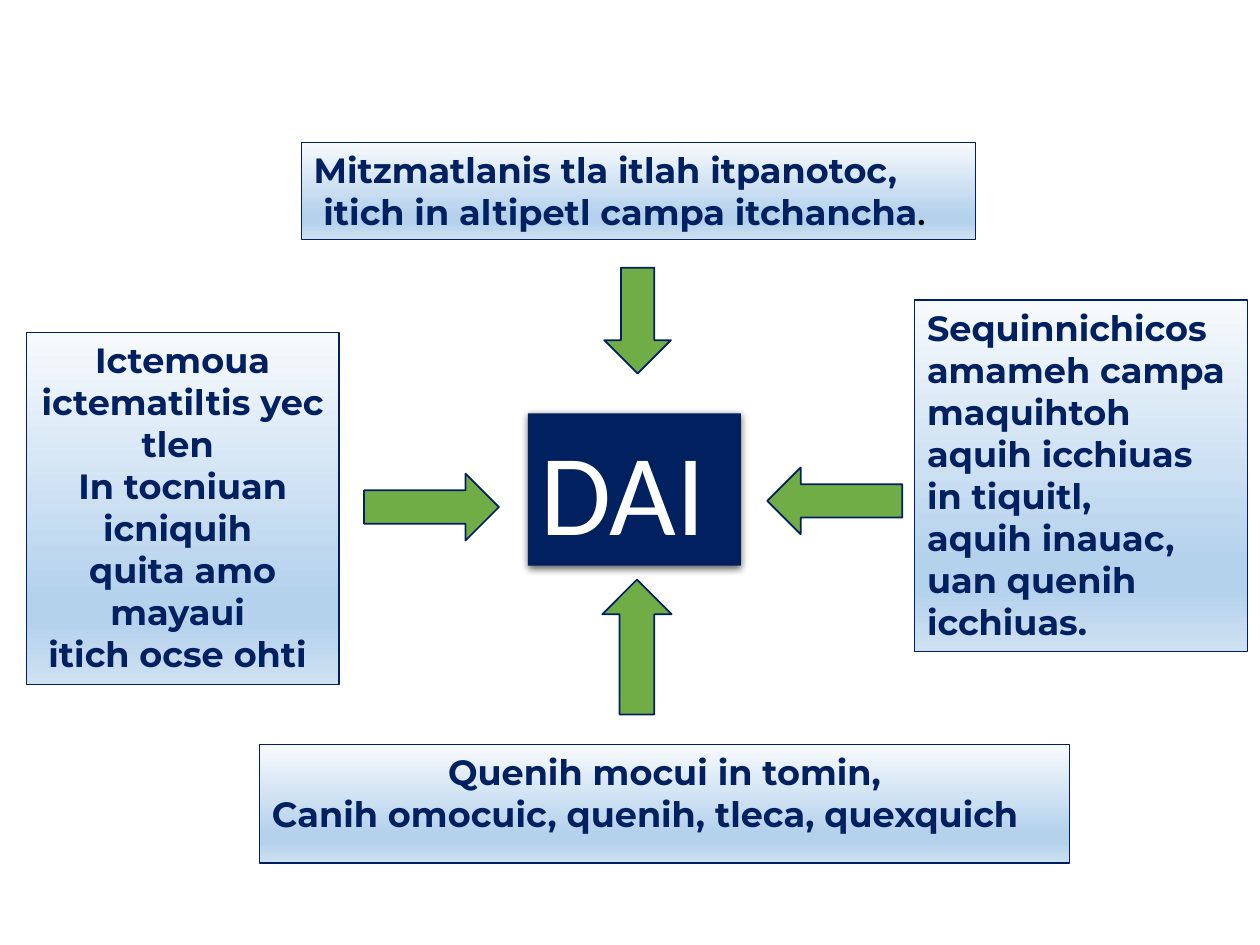
from lxml import etree
from pptx import Presentation
from pptx.dml.color import RGBColor
from pptx.enum.shapes import MSO_SHAPE
from pptx.enum.text import PP_ALIGN
from pptx.oxml import parse_xml
from pptx.util import Inches, Pt

LEFT, CENTER = PP_ALIGN.LEFT, PP_ALIGN.CENTER
RECT, ARROW = MSO_SHAPE.RECTANGLE, MSO_SHAPE.RIGHT_ARROW
NS = "http://schemas.openxmlformats.org/drawingml/2006/main"
NAVY, GREEN, WHITE, BLACK = "002060", "70AD47", "FFFFFF", "000000"
STOPS = [(0, "F7FAFD"), (74, "B5D2EC"), (83, "B5D2EC"), (100, "CEE1F2")]

HUB = ("DAI", (4.19, 3.28, 1.69, 1.21))
NOTES = [
    ((7.26, 2.38, 2.64, 2.79), [
        ("Sequinnichicos amameh campa maquihtoh aquih icchiuas in tiquitl,", LEFT),
        ("aquih inauac, uan quenih icchiuas.", LEFT)]),
    ((2.39, 1.13, 5.35, 0.77), [
        ("Mitzmatlanis tla itlah itpanotoc,", LEFT),
        (" itich in altipetl campa itchancha", LEFT)]),
    ((2.06, 5.91, 6.43, 0.94), [
        ("Quenih mocui in tomin,", CENTER),
        ("Canih omocuic, quenih, tleca, quexquich", LEFT)]),
    ((0.21, 2.64, 2.48, 2.79), [
        ("Ictemoua ictematiltis yec tlen ", CENTER),
        ("In tocniuan icniquih ", CENTER),
        ("quita amo mayaui ", CENTER),
        ("itich ocse ohti ", CENTER)]),
]
ARROWS = [
    ((4.52, 4.86, 1.07, 0.55), 270),
    ((6.09, 3.71, 1.07, 0.53), 180),
    ((4.64, 2.28, 0.84, 0.53), 90),
    ((2.89, 3.76, 1.07, 0.53), 0),
]


def rgb(value):
    """Return the colour for a hex string."""
    return RGBColor.from_string(value)


def style_run(r, font, size, color, bold=False):
    """Set the font of one run."""
    r.font.name, r.font.size, r.font.bold = font, Pt(size), bold
    r.font.color.rgb = rgb(color)


def set_line(sp, width):
    """Give a shape a navy outline."""
    sp.line.color.rgb = rgb(NAVY)
    sp.line.width = Pt(width)


def set_gradient(sp):
    """Fill a shape from top to bottom with the pale blue stops."""
    sp.fill.gradient()
    grad = sp.element.spPr.find(f"{{{NS}}}gradFill")
    stops = "".join(f'<a:gs pos="{pos * 1000}"><a:srgbClr val="{color}"/></a:gs>'
                    for pos, color in STOPS)
    grad.getparent().replace(grad, parse_xml(
        f'<a:gradFill xmlns:a="{NS}" rotWithShape="1"><a:gsLst>{stops}</a:gsLst>'
        '<a:lin ang="5400000" scaled="0"/></a:gradFill>'))


def set_shadow(sp):
    """Add a soft shadow just below a shape."""
    sp.shadow.inherit = False
    effects = sp.element.spPr.find(f"{{{NS}}}effectLst")
    shadow = etree.SubElement(effects, f"{{{NS}}}outerShdw", blurRad=str(Pt(4.5)),
                              dist=str(Pt(1.5)), dir="5400000", rotWithShape="0")
    color = etree.SubElement(shadow, f"{{{NS}}}srgbClr", val=BLACK)
    etree.SubElement(color, f"{{{NS}}}alpha", val="63000")


def add_hub(s, text, box):
    """Add the central block."""
    sp = s.shapes.add_shape(RECT, *map(Inches, box))
    sp.fill.solid()
    sp.fill.fore_color.rgb = rgb(NAVY)
    sp.line.fill.background()
    set_shadow(sp)
    tf = sp.text_frame
    tf.text = text
    p = tf.paragraphs[0]
    p.alignment = LEFT
    style_run(p.runs[0], "Calibri", 66, WHITE)


def add_arrow(s, box, rotation):
    """Add an arrow that points at the hub."""
    sp = s.shapes.add_shape(ARROW, *map(Inches, box))
    sp.rotation = rotation
    sp.shadow.inherit = False
    sp.fill.solid()
    sp.fill.fore_color.rgb = rgb(GREEN)
    set_line(sp, 1)


def add_note(s, box, lines):
    """Add a gradient text box and return its text frame."""
    sp = s.shapes.add_textbox(*map(Inches, box))
    set_gradient(sp)
    set_line(sp, 0.75)
    tf = sp.text_frame
    tf.word_wrap = True
    tf.text = "\n".join(text for text, _ in lines)
    for p, (_, alignment) in zip(tf.paragraphs, lines):
        p.alignment = alignment
        style_run(p.runs[0], "Montserrat", 20, NAVY, True)
    return tf


def main():
    """Build the slide."""
    prs = Presentation()
    prs.slide_width, prs.slide_height = Inches(10), Inches(7.5)
    s = prs.slides.add_slide(prs.slide_layouts[6])
    add_hub(s, *HUB)
    for box, rotation in ARROWS:
        add_arrow(s, box, rotation)
    frames = [add_note(s, box, lines) for box, lines in NOTES]
    r = frames[1].paragraphs[-1].add_run()
    r.text = "."
    style_run(r, "Montserrat", 16, BLACK, True)
    prs.save("out.pptx")


if __name__ == "__main__":
    main()
